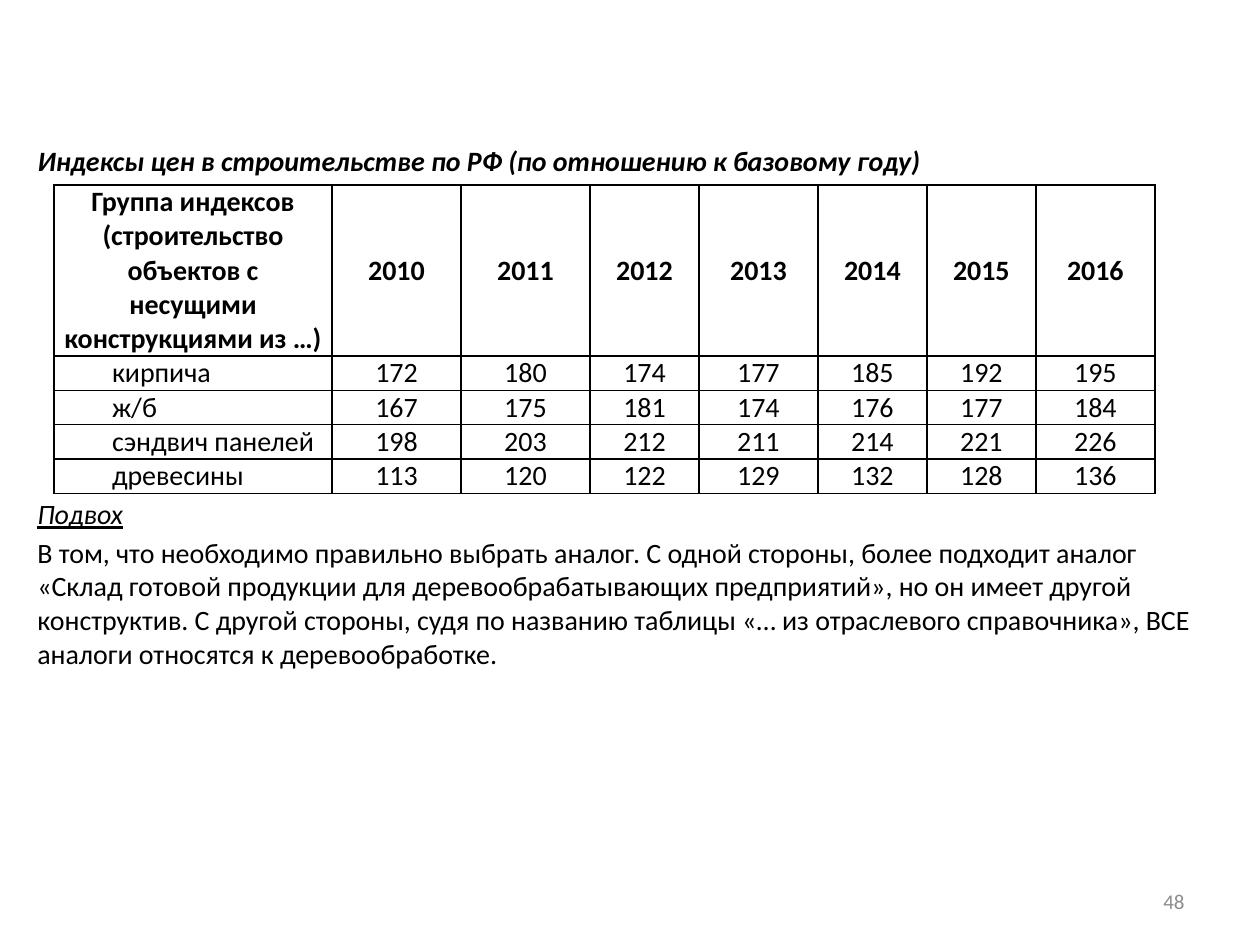
"""Builds the slide with construction price indices and a note on choosing an analogue."""
import pptx
import pptx.dml.color
import pptx.enum.text
import pptx.oxml
import pptx.oxml.ns
import pptx.util

EMU_PER_PX = 914400 // 126
COLORS = {"text": "000000", "page": "8C8C8C", "cell": "FFFFFF", "border": "000000"}
ALIGN = pptx.enum.text.PP_ALIGN
ANCHOR = pptx.enum.text.MSO_ANCHOR

COLUMN_WIDTHS = [278, 129, 129, 109, 119, 109, 109, 119]
HEADER_HEIGHT, ROW_HEIGHT = 171, 34
INDICES = [
    ["Группа индексов\n(строительство объектов с несущими конструкциями из …)",
     *range(2010, 2017)],
    ["кирпича", 172, 180, 174, 177, 185, 192, 195],
    ["ж/б", 167, 175, 181, 174, 176, 177, 184],
    ["сэндвич панелей", 198, 203, 212, 211, 214, 221, 226],
    ["древесины", 113, 120, 122, 129, 132, 128, 136],
]
NOTE = (
    "В том, что необходимо правильно выбрать аналог. С одной стороны, более подходит аналог "
    "«Склад готовой продукции для деревообрабатывающих предприятий», но он имеет другой "
    "конструктив. С другой стороны, судя по названию таблицы «… из отраслевого справочника», "
    "ВСЕ аналоги относятся к деревообработке."
)


def px(length):
    return pptx.util.Emu(length * EMU_PER_PX)


class SlideBuilder:
    def __init__(self, slide, font="Calibri", size=16):
        self.slide, self.font, self.size = slide, font, size

    def style(self, paragraph, color="text", size=None, bold=False, italic=False,
              underline=False, align=ALIGN.LEFT):
        paragraph.alignment = align
        font = paragraph.font
        font.name, font.size = self.font, pptx.util.Pt(size or self.size)
        font.bold, font.italic, font.underline = bold, italic, underline
        font.color.rgb = pptx.dml.color.RGBColor.from_string(COLORS[color])

    def fill_frame(self, shape, box, texts, anchor=ANCHOR.TOP):
        shape.left, shape.top, shape.width, shape.height = map(px, box)
        frame = shape.text_frame
        frame.word_wrap, frame.vertical_anchor = True, anchor
        frame.auto_size = pptx.enum.text.MSO_AUTO_SIZE.NONE
        frame.text = "\n".join(text for text, _ in texts)
        for index, (paragraph, (_, look)) in enumerate(zip(frame.paragraphs, texts)):
            paragraph.space_before = pptx.util.Pt(3.2 if index else 0)
            self.style(paragraph, **look)

    def title(self, box, text):
        self.fill_frame(self.slide.shapes.title, box, [(text, {"bold": True, "italic": True})])

    def text(self, box, texts, anchor=ANCHOR.TOP):
        self.fill_frame(self.slide.shapes.add_textbox(0, 0, 0, 0), box, texts, anchor)

    def cell(self, cell, text, header, label):
        cell.text = str(text)
        cell.vertical_anchor = ANCHOR.MIDDLE
        cell.margin_left = cell.margin_right = px(9)
        cell.margin_top = cell.margin_bottom = 0
        properties = cell._tc.get_or_add_tcPr()
        for side in "LRTB":
            properties.append(pptx.oxml.parse_xml(
                f'<a:ln{side} {pptx.oxml.ns.nsdecls("a")} w="12700"><a:solidFill>'
                f'<a:srgbClr val="{COLORS["border"]}"/></a:solidFill></a:ln{side}>'))
        cell.fill.solid()
        cell.fill.fore_color.rgb = pptx.dml.color.RGBColor.from_string(COLORS["cell"])
        for paragraph in cell.text_frame.paragraphs:
            if label:
                paragraph._p.get_or_add_pPr().set("marL", str(px(49)))
            self.style(paragraph, bold=header, align=ALIGN.LEFT if label else ALIGN.CENTER)

    def table(self, left, top, widths, heights, rows):
        table = self.slide.shapes.add_table(
            len(rows), len(widths), px(left), px(top), px(sum(widths)), px(sum(heights))).table
        table.first_row = table.horz_banding = False
        for column, width in zip(table.columns, widths):
            column.width = px(width)
        for row_index, (values, height) in enumerate(zip(rows, heights)):
            table.rows[row_index].height = px(height)
            for column_index, value in enumerate(values):
                header = row_index == 0
                self.cell(table.cell(row_index, column_index), value, header,
                          label=column_index == 0 and not header)


def main():
    presentation = pptx.Presentation()
    presentation.slide_width, presentation.slide_height = px(1260), px(945)
    slide = presentation.slides.add_slide(presentation.slide_layouts[5])
    builder = SlideBuilder(slide)
    builder.title((25, 137, 1200, 46),
                  "Индексы цен в строительстве по РФ (по отношению к базовому году)")
    heights = [HEADER_HEIGHT] + [ROW_HEIGHT] * (len(INDICES) - 1)
    builder.table(54, 185, COLUMN_WIDTHS, heights, INDICES)
    builder.text((25, 490, 1200, 380),
                 [("Подвох", {"italic": True, "underline": True}), (NOTE, {})])
    builder.text((903, 876, 294, 50),
                 [("48", {"color": "page", "size": 12, "align": ALIGN.RIGHT})], ANCHOR.MIDDLE)
    presentation.save("out.pptx")


if __name__ == "__main__":
    main()
